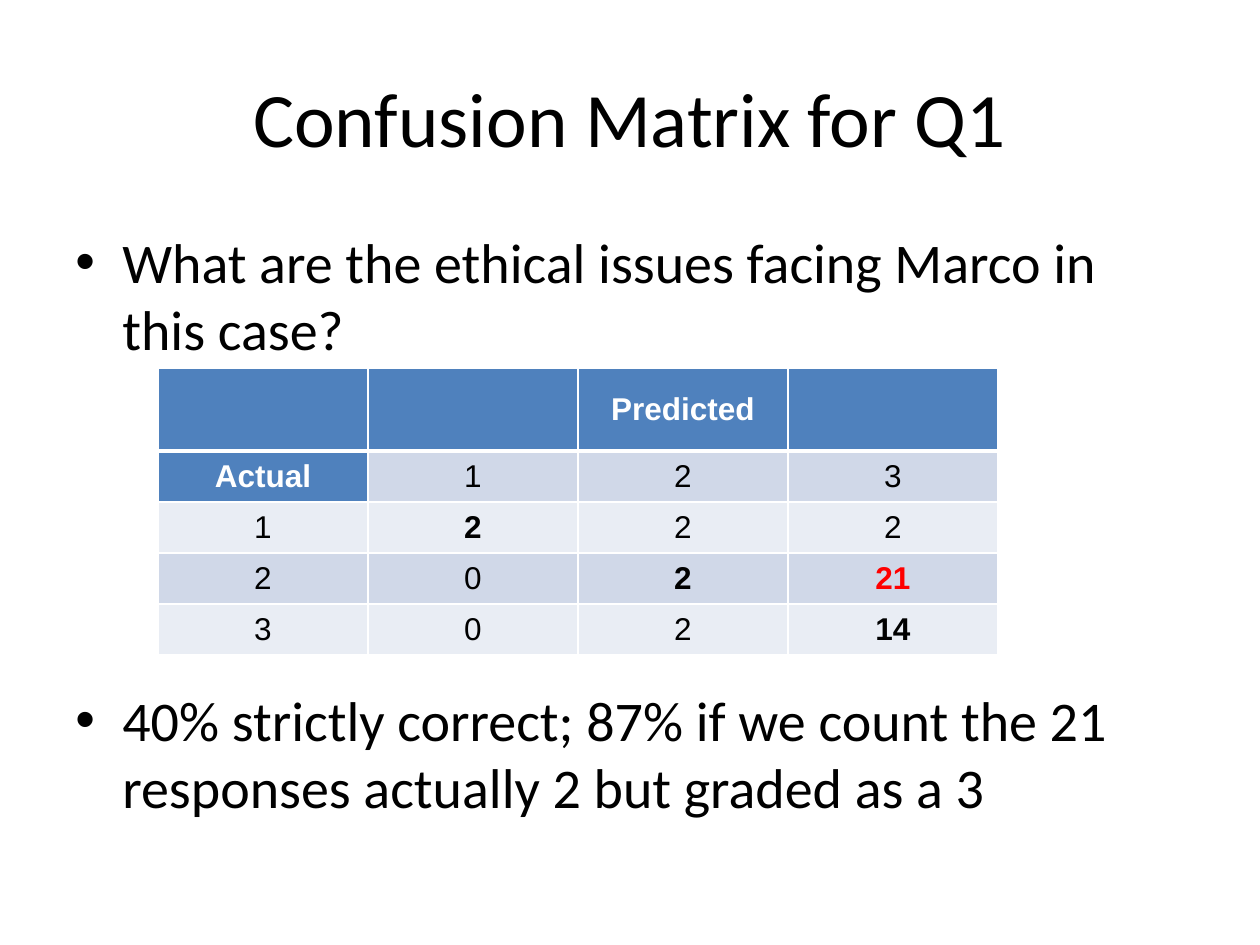
from dataclasses import dataclass

from lxml.etree import SubElement
from pptx import Presentation
from pptx.dml.color import RGBColor
from pptx.enum.text import MSO_ANCHOR, PP_ALIGN
from pptx.oxml.ns import qn
from pptx.util import Emu, Pt

PX_PER_INCH = 126


@dataclass(frozen=True)
class Theme:
    heading_font: str = "Calibri"
    table_font: str = "Arial"
    title_size: int = 44
    body_size: int = 32
    table_size: int = 18
    text: str = "000000"
    white: str = "FFFFFF"
    header: str = "4F81BD"
    bands: tuple = ("D0D8E8", "E9EDF4")
    highlight: str = "FF0000"


THEME = Theme()

BULLETS = [
    "What are the ethical issues facing Marco in this case?",
    "40% strictly correct; 87% if we count the 21 responses actually 2 but graded as a 3",
]
MATRIX = [
    ["", "", "Predicted", ""],
    ["Actual", "1", "2", "3"],
    ["1", "2", "2", "2"],
    ["2", "0", "2", "21"],
    ["3", "0", "2", "14"],
]
HEADERS = {(0, 0), (0, 1), (0, 2), (0, 3), (1, 0)}
HIGHLIGHT = (3, 3)
BOLD = {(2, 1), (3, 2), (4, 3), HIGHLIGHT}


def px(value):
    return Emu(round(value * 914400 / PX_PER_INCH))


def apply_format(target, values):
    for name, value in values.items():
        setattr(target, name, value)


def style_font(paragraph, font, size, color, bold=False):
    apply_format(paragraph.font, {"name": font, "size": Pt(size), "bold": bold})
    paragraph.font.color.rgb = RGBColor.from_string(color)


def add_text_frame(slide, left, top, width, height, anchor):
    shape = slide.shapes.add_textbox(px(left), px(top), px(width), px(height))
    apply_format(shape.text_frame, {"word_wrap": True, "vertical_anchor": anchor})
    return shape.text_frame


def add_title(slide, text):
    frame = add_text_frame(slide, 63, 38, 1134, 157, MSO_ANCHOR.MIDDLE)
    paragraph = frame.paragraphs[0]
    apply_format(paragraph, {"text": text, "alignment": PP_ALIGN.CENTER})
    style_font(paragraph, THEME.heading_font, THEME.title_size, THEME.text)


def set_bullet(paragraph, indent):
    properties = paragraph._p.get_or_add_pPr()
    properties.set("marL", str(px(indent)))
    properties.set("indent", str(-px(indent)))
    SubElement(properties, qn("a:buFont"), typeface=THEME.table_font)
    SubElement(properties, qn("a:buChar"), char="•")


def add_bullets(slide, texts, gap):
    frame = add_text_frame(slide, 63, 221, 1134, 624, MSO_ANCHOR.TOP)
    for index, text in enumerate(texts):
        paragraph = frame.add_paragraph() if index else frame.paragraphs[0]
        paragraph.text = text
        if index:
            paragraph.space_before = px(gap)
        set_bullet(paragraph, 47)
        style_font(paragraph, THEME.heading_font, THEME.body_size, THEME.text)


def set_borders(cell, widths):
    properties = cell._tc.get_or_add_tcPr()
    for side, width in widths.items():
        line = SubElement(properties, qn(f"a:ln{side}"), w=str(Pt(width)))
        fill = SubElement(line, qn("a:solidFill"))
        SubElement(fill, qn("a:srgbClr"), val=THEME.white)


def format_cell(cell, text, position):
    row = position[0]
    is_header = position in HEADERS
    # Thick rule between the header row and the body
    set_borders(cell, {"L": 1, "R": 1, "T": 3 if row == 1 else 1, "B": 3 if row == 0 else 1})
    cell.fill.solid()
    fill = THEME.header if is_header else THEME.bands[(row - 1) % 2]
    cell.fill.fore_color.rgb = RGBColor.from_string(fill)
    apply_format(cell, {"text": text, "vertical_anchor": MSO_ANCHOR.MIDDLE})
    color = THEME.white if is_header else THEME.text
    if position == HIGHLIGHT:
        color = THEME.highlight
    paragraph = cell.text_frame.paragraphs[0]
    paragraph.alignment = PP_ALIGN.CENTER
    style_font(paragraph, THEME.table_font, THEME.table_size, color,
               is_header or position in BOLD)


def add_matrix(slide, rows):
    column_width, header_height, row_height = 210, 83, 51
    column_count = len(rows[0])
    height = header_height + row_height * (len(rows) - 1)
    table = slide.shapes.add_table(
        len(rows), column_count, px(158), px(368),
        px(column_width * column_count), px(height)).table
    for column in table.columns:
        column.width = px(column_width)
    for row_index, values in enumerate(rows):
        table.rows[row_index].height = px(row_height if row_index else header_height)
        for column_index, text in enumerate(values):
            format_cell(table.cell(row_index, column_index), text, (row_index, column_index))


def main():
    presentation = Presentation()
    apply_format(presentation, {"slide_width": px(1260), "slide_height": px(945)})
    slide = presentation.slides.add_slide(presentation.slide_layouts[6])

    # Heading, then bullets with room left for the table
    add_title(slide, "Confusion Matrix for Q1")
    add_bullets(slide, BULLETS, gap=324)

    # Confusion matrix
    add_matrix(slide, MATRIX)

    presentation.save("out.pptx")


if __name__ == "__main__":
    main()
